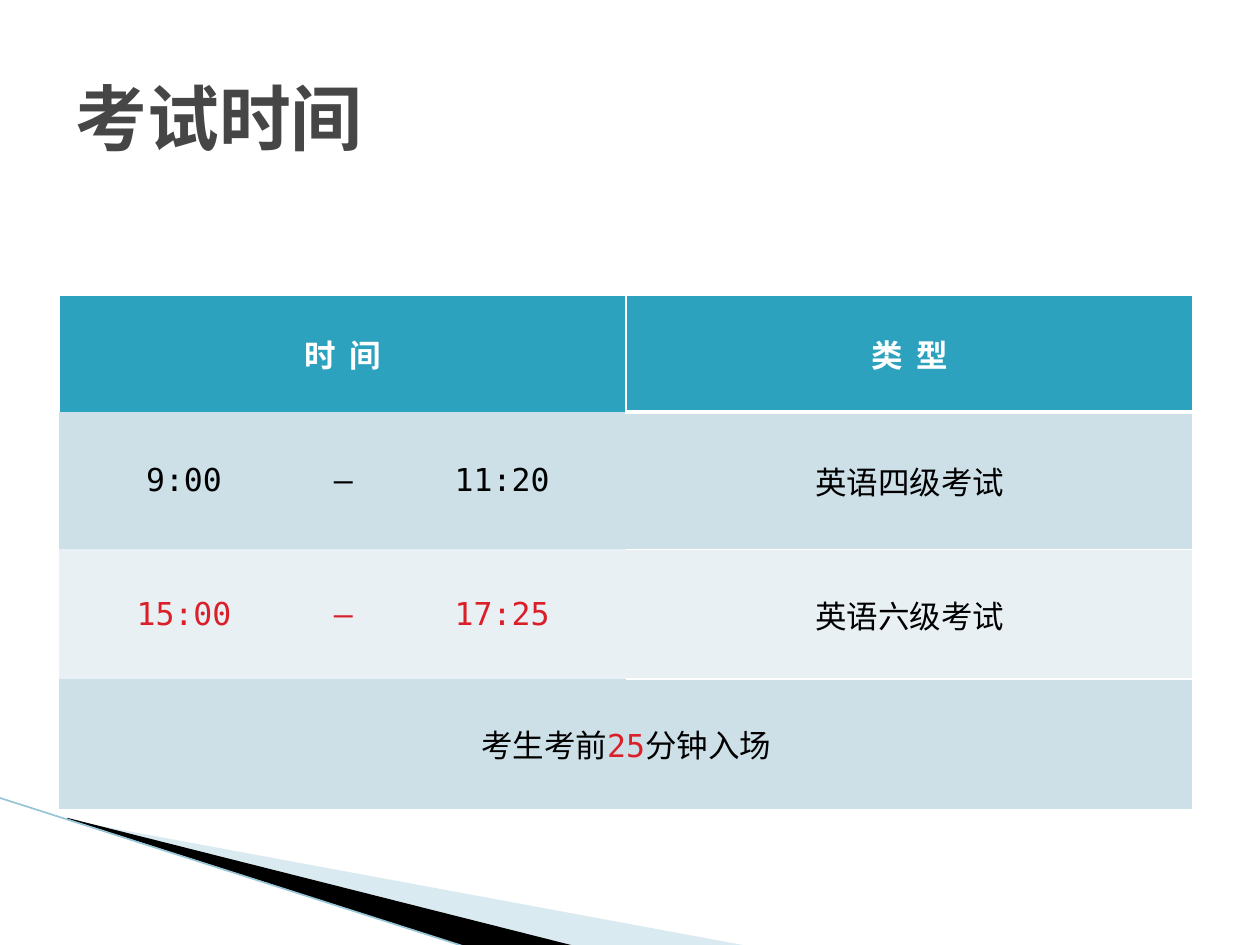
from dataclasses import dataclass

from lxml.etree import SubElement
from pptx import Presentation
from pptx.dml.color import RGBColor
from pptx.enum.shapes import MSO_CONNECTOR
from pptx.enum.text import MSO_ANCHOR, PP_ALIGN
from pptx.oxml.ns import qn
from pptx.util import Inches, Pt


@dataclass(frozen=True)
class Theme:
    """Colours, font and type sizes of the slide."""
    font: str = "DejaVu Sans Mono"
    title_size: int = 41
    body_size: int = 18
    title: str = "464646"
    white: str = "FFFFFF"
    black: str = "000000"
    red: str = "DA1F28"
    header: str = "2DA2BF"
    band_dark: str = "CDE0E8"
    band_light: str = "E8F0F4"
    wedge: str = "A0CBDC"
    edge: str = "97C5D8"


THEME = Theme()
COLUMN_WIDTHS = (1.98, 0.55, 1.97, 4.5)
ROW_HEIGHTS = (0.93, 1.09, 1.03, 1.03)
ROW_FILLS = (THEME.header, THEME.band_dark, THEME.band_light, THEME.band_dark)
HEADER_FORMAT = {"color": THEME.white, "bold": True, "spacing": 200}
CELL_TEXTS = {
    (0, 0): [("时 间", HEADER_FORMAT)],
    (0, 3): [("类 型", HEADER_FORMAT)],
    (1, 0): [("9:00", {})],
    (1, 1): [("—", {})],
    (1, 2): [("11:20", {})],
    (1, 3): [("英语四级考试", {})],
    (2, 0): [("15:00", {"color": THEME.red})],
    (2, 1): [("—", {"color": THEME.red})],
    (2, 2): [("17:25", {"color": THEME.red})],
    (2, 3): [("英语六级考试", {})],
    (3, 0): [("考生考前", {}), ("25", {"color": THEME.red}), ("分钟入场", {})],
}
CELL_BORDERS = {
    (0, 0): {"L": 1, "T": 1, "R": 1},
    (0, 3): {"L": 1, "T": 1, "R": 1, "B": 3},
    (1, 3): {"T": 1, "R": 1, "B": 1},
    (2, 3): {"T": 1, "R": 1, "B": 1},
    (3, 0): {"R": 1},
}


def add_text(paragraph, text, color=THEME.black, size=THEME.body_size, bold=False, spacing=0):
    """Append one formatted run to a paragraph."""
    run = paragraph.add_run()
    run.text = text
    run.font.name = THEME.font
    run.font.size = Pt(size)
    run.font.bold = bold
    run.font.color.rgb = RGBColor.from_string(color)
    if spacing:
        run.font._element.set("spc", str(spacing))


def add_wedge(slide, points, color, opacity=100):
    """Draw a filled outline through points given in inches."""
    start, *others = [(Inches(x), Inches(y)) for x, y in points]
    builder = slide.shapes.build_freeform(*start)
    builder.add_line_segments(others, close=True)
    shape = builder.convert_to_shape()
    shape.shadow.inherit = False
    shape.line.fill.background()
    shape.fill.solid()
    shape.fill.fore_color.rgb = RGBColor.from_string(color)
    if opacity < 100:
        color_element = shape._element.spPr.find(f".//{qn('a:srgbClr')}")
        SubElement(color_element, qn("a:alpha"), val=str(opacity * 1000))


def add_edge(slide, start, end):
    """Draw the thin line along the corner wedges."""
    positions = [Inches(value) for value in (*start, *end)]
    line = slide.shapes.add_connector(MSO_CONNECTOR.STRAIGHT, *positions)
    line.line.color.rgb = RGBColor.from_string(THEME.edge)
    line.line.width = Pt(0.95)
    SubElement(line._element.spPr, qn("a:effectLst"))


def set_borders(cell, widths):
    """Set white borders on the named sides and none on the others."""
    properties = cell._tc.get_or_add_tcPr()
    for side in "LRTB":
        width = widths.get(side, 0)
        border = SubElement(properties, qn(f"a:ln{side}"), w=str(Pt(width)))
        if width:
            fill = SubElement(border, qn("a:solidFill"))
            SubElement(fill, qn("a:srgbClr"), val=THEME.white)
        else:
            SubElement(border, qn("a:noFill"))


def add_schedule(slide):
    """Add the table of exam times and types."""
    frame = slide.shapes.add_table(
        len(ROW_HEIGHTS), len(COLUMN_WIDTHS), Inches(0.47), Inches(2.34),
        Inches(sum(COLUMN_WIDTHS)), Inches(sum(ROW_HEIGHTS)))
    table = frame.table
    for column, width in zip(table.columns, COLUMN_WIDTHS):
        column.width = Inches(width)
    for row_index, (height, fill) in enumerate(zip(ROW_HEIGHTS, ROW_FILLS)):
        table.rows[row_index].height = Inches(height)
        for column_index in range(len(COLUMN_WIDTHS)):
            cell = table.cell(row_index, column_index)
            position = (row_index, column_index)
            set_borders(cell, CELL_BORDERS.get(position, {}))
            cell.fill.solid()
            cell.fill.fore_color.rgb = RGBColor.from_string(fill)
            cell.vertical_anchor = MSO_ANCHOR.MIDDLE
            paragraph = cell.text_frame.paragraphs[0]
            paragraph.alignment = PP_ALIGN.CENTER
            for text, text_format in CELL_TEXTS.get(position, []):
                add_text(paragraph, text, **text_format)
    table.cell(0, 0).merge(table.cell(0, 2))
    table.cell(3, 0).merge(table.cell(3, 3))


def set_title(slide, text):
    """Place and format the title placeholder."""
    title = slide.shapes.title
    title.left, title.top = Inches(0.5), Inches(0.3)
    title.width, title.height = Inches(9), Inches(1.25)
    title.text_frame.vertical_anchor = MSO_ANCHOR.MIDDLE
    paragraph = title.text_frame.paragraphs[0]
    paragraph.alignment = PP_ALIGN.LEFT
    add_text(paragraph, text, color=THEME.title, size=THEME.title_size, bold=True)


def main():
    """Build and save the exam schedule slide."""
    presentation = Presentation()
    presentation.slide_width, presentation.slide_height = Inches(10), Inches(7.5)
    slide = presentation.slides.add_slide(presentation.slide_layouts[5])
    add_wedge(slide, [(0.55, 6.51), (5.95, 7.51), (4.56, 7.51), (0.55, 6.5)],
              THEME.wedge, opacity=40)
    add_wedge(slide, [(0.53, 6.49), (4.57, 7.51), (3.72, 7.52), (0.54, 6.5)], THEME.black)
    add_edge(slide, (-0.01, 6.33), (3.71, 7.52))
    add_schedule(slide)
    set_title(slide, "考试时间")
    presentation.save("out.pptx")


if __name__ == "__main__":
    main()
